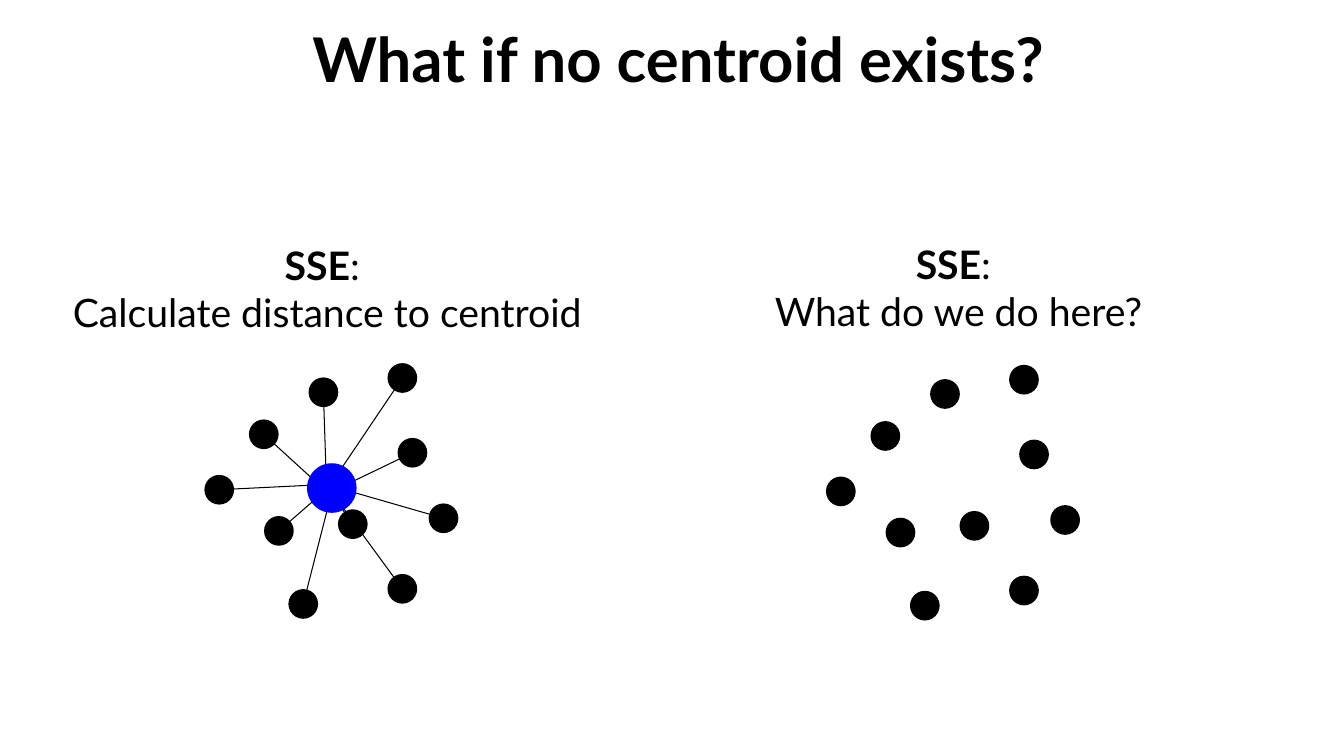
from lxml.etree import SubElement
from pptx import Presentation
from pptx.dml.color import RGBColor
from pptx.enum.shapes import MSO_CONNECTOR, MSO_SHAPE
from pptx.enum.text import MSO_ANCHOR, MSO_AUTO_SIZE, PP_ALIGN
from pptx.oxml.ns import qn
from pptx.util import Emu, Pt

# Grid: 160 columns by 90 rows of square cells, 12 to the inch
COLS, ROWS, CELL = 160, 90, 76200
DOT_SIZE, HUB_SIZE = 3.54, 5.9
HUB = (39.5, 58.1)

# Centre of each data point, and where its line ends inside the centroid
POINTS = [
    ((42, 62.4), (39.2, 58.4)),
    ((38.5, 46.7), (38.8, 55.7)),
    ((31.4, 51.7), (37.2, 57)),
    ((33.2, 63.2), (38.5, 58.6)),
    ((49.1, 53.9), (41.2, 57.7)),
    ((52.8, 61.7), (40.3, 58.1)),
    ((47.9, 70.1), (39.2, 58.2)),
    ((47.9, 45), (40.7, 55.7)),
    ((26.1, 58.3), (38.3, 57.7)),
    ((36.1, 71.9), (39.5, 58.6)),
]
RIGHT_SHIFT = (74, 0.2)


def cells(*values):
    return [Emu(round(v * CELL)) for v in values]


def color(hex_str):
    return RGBColor.from_string(hex_str)


class SlideBuilder:
    font, ink, accent = "Lato", "000000", "0000FF"
    title_size, text_size, line_width = 44, 28, 0.75

    def __init__(self, prs):
        self.s = prs.slides.add_slide(prs.slide_layouts[5])

    def run(self, p, text, size, bold=False):
        r = p.add_run()
        r.text = text
        style = {"name": self.font, "size": Pt(size), "bold": bold}
        for key, value in style.items():
            setattr(r.font, key, value)
        r.font.color.rgb = color(self.ink)

    def frame(self, tf, **settings):
        for key, value in settings.items():
            setattr(tf, key, value)

    def title(self, text, box):
        sp = self.s.shapes.title
        sp.left, sp.top, sp.width, sp.height = cells(*box)
        tf = sp.text_frame
        self.frame(tf, margin_left=0, margin_right=0, margin_top=0,
                   margin_bottom=0, vertical_anchor=MSO_ANCHOR.MIDDLE,
                   auto_size=MSO_AUTO_SIZE.SHAPE_TO_FIT_TEXT)
        p = tf.paragraphs[0]
        p.alignment = PP_ALIGN.CENTER
        self.run(p, text, self.title_size, True)

    def caption(self, head, text, box):
        tf = self.s.shapes.add_textbox(*cells(*box)).text_frame
        self.frame(tf, word_wrap=False,
                   auto_size=MSO_AUTO_SIZE.SHAPE_TO_FIT_TEXT)
        top, bottom = tf.paragraphs[0], tf.add_paragraph()
        for p in (top, bottom):
            p.alignment = PP_ALIGN.CENTER
        self.run(top, head, self.text_size, True)
        self.run(top, ": ", self.text_size)
        self.run(bottom, text, self.text_size)

    def line(self, group, start, end):
        sp = group.shapes.add_connector(MSO_CONNECTOR.STRAIGHT,
                                        *cells(*start, *end))
        sp.line.color.rgb = color(self.ink)
        sp.line.width = Pt(self.line_width)
        SubElement(sp._element.spPr, qn("a:effectLst"))

    def dot(self, group, center, size, fill):
        x, y = center
        sp = group.shapes.add_shape(
            MSO_SHAPE.OVAL, *cells(x - size / 2, y - size / 2, size, size))
        sp.shadow.inherit = False
        sp.fill.solid()
        sp.fill.fore_color.rgb = color(fill)
        sp.line.fill.background()

    def cluster(self, shift=(0, 0), centroid=False):
        group = self.s.shapes.add_group_shape()
        if centroid:
            for center, inner in POINTS:
                self.line(group, center, inner)
        for (x, y), _ in POINTS:
            self.dot(group, (x + shift[0], y + shift[1]), DOT_SIZE, self.ink)
        if centroid:
            self.dot(group, HUB, HUB_SIZE, self.accent)


def main():
    prs = Presentation()
    prs.slide_width, prs.slide_height = cells(COLS, ROWS)
    b = SlideBuilder(prs)
    b.title("What if no centroid exists?", (5.2, 2.4, 151.1, 8.9))

    # Left: distances to the centroid
    b.caption("SSE", "Calculate distance to centroid", (7.1, 28.1, 63.7, 12.5))
    b.cluster(centroid=True)

    # Right: the same points without a centroid
    b.caption("SSE", "What do we do here?", (90.6, 28, 47, 12.5))
    b.cluster(RIGHT_SHIFT)

    prs.save("out.pptx")


if __name__ == "__main__":
    main()
